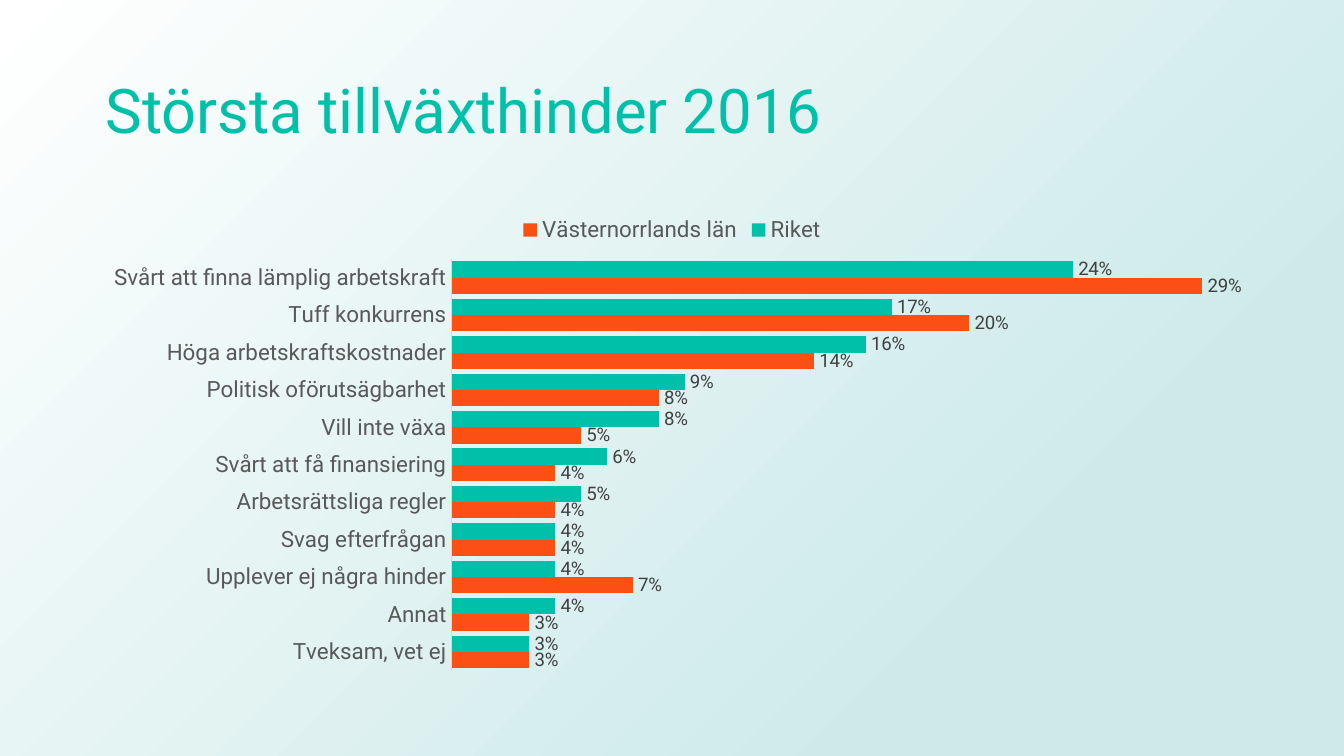
import pptx
import pptx.util
import pptx.chart.data
import pptx.dml.color
import pptx.enum.chart
import pptx.enum.dml
import pptx.enum.shapes
import pptx.enum.text
import pptx.oxml

Pt = pptx.util.Pt
WIDTH, HEIGHT = 720, 405
COLOURS = {
    "teal": "00C0A9",
    "orange": "FB4F14",
    "mist": "CDEAE9",
    "white": "FFFFFF",
    "axis": "D9D9D9",
    "text": "595959",
    "label": "404040",
}
HINDRANCES = [
    ("Svårt att finna lämplig arbetskraft", 0.24, 0.29),
    ("Tuff konkurrens", 0.17, 0.20),
    ("Höga arbetskraftskostnader", 0.16, 0.14),
    ("Politisk oförutsägbarhet", 0.09, 0.08),
    ("Vill inte växa", 0.08, 0.05),
    ("Svårt att få finansiering", 0.06, 0.04),
    ("Arbetsrättsliga regler", 0.05, 0.04),
    ("Svag efterfrågan", 0.04, 0.04),
    ("Upplever ej några hinder", 0.04, 0.07),
    ("Annat", 0.04, 0.03),
    ("Tveksam, vet ej", 0.03, 0.03),
]
REGIONS = [("Riket", "teal"), ("Västernorrlands län", "orange")]


class SlideBuilder:
    """Holds the style and the current slide, and draws each kind of element."""

    def __init__(self, page, font_name="Roboto"):
        self.page = page
        self.font_name = font_name

    def colour(self, name):
        return pptx.dml.color.RGBColor.from_string(COLOURS[name])

    def style(self, font, size, colour):
        font.name = self.font_name
        font.size = Pt(size)
        font.color.rgb = self.colour(colour)

    def backdrop(self, start, end, end_position):
        box = self.page.shapes.add_shape(
            pptx.enum.shapes.MSO_SHAPE.RECTANGLE, 0, 0, Pt(WIDTH), Pt(HEIGHT))
        box.shadow.inherit = False
        box.line.fill.background()
        box.fill.gradient()
        box.fill.gradient_angle = 315
        stops = zip(box.fill.gradient_stops, (start, end), (0, end_position))
        for stop, name, position in stops:
            stop.color.rgb = self.colour(name)
            stop.position = position

    def title(self, text, left, top, width, height):
        box = self.page.shapes.add_textbox(Pt(left), Pt(top), Pt(width), Pt(height))
        frame = box.text_frame
        frame.word_wrap = True
        frame.vertical_anchor = pptx.enum.text.MSO_ANCHOR.MIDDLE
        para = frame.paragraphs[0]
        para.text = text
        para.line_spacing = 0.9
        self.style(para.font, 33, "teal")

    def bar_chart(self, left, top, width, height):
        data = pptx.chart.data.CategoryChartData(number_format="0%")
        data.categories = [row[0] for row in HINDRANCES]
        for column, (name, _) in enumerate(REGIONS, 1):
            data.add_series(name, [row[column] for row in HINDRANCES])
        chart = self.page.shapes.add_chart(
            pptx.enum.chart.XL_CHART_TYPE.BAR_CLUSTERED,
            Pt(left), Pt(top), Pt(width), Pt(height), data).chart
        chart.has_title = False
        self.style(chart.font, 12, "text")
        chart.has_legend = True
        chart.legend.position = pptx.enum.chart.XL_LEGEND_POSITION.TOP
        chart.legend.include_in_layout = False
        self.style(chart.legend.font, 12, "text")
        self.axes(chart)
        self.series(chart.plots[0])
        self.plot_area(chart, x=0.31, y=0.12, w=0.67, h=0.86)

    def axes(self, chart):
        none = pptx.enum.chart.XL_TICK_MARK.NONE
        category = chart.category_axis
        category.reverse_order = True
        category.major_tick_mark = category.minor_tick_mark = none
        category.format.line.color.rgb = self.colour("axis")
        category.format.line.width = Pt(0.75)
        self.style(category.tick_labels.font, 12, "text")
        value = chart.value_axis
        value.minimum_scale, value.maximum_scale = 0, 0.3
        value.has_major_gridlines = False
        value.visible = False

    def series(self, plot):
        plot.gap_width = 30
        plot.overlap = 0
        plot.vary_by_categories = False
        for series, (_, colour) in zip(plot.series, REGIONS):
            series.format.fill.solid()
            series.format.fill.fore_color.rgb = self.colour(colour)
            labels = series.data_labels
            labels.show_value = True
            labels.number_format = "0%"
            labels.number_format_is_linked = False
            labels.position = pptx.enum.chart.XL_LABEL_POSITION.OUTSIDE_END
            self.style(labels.font, 10, "label")

    def plot_area(self, chart, **frame):
        area = chart.element.chart.plotArea
        for old in area.findall(pptx.oxml.ns.qn("c:layout")):
            area.remove(old)
        sizes = "".join(f'<c:{key} val="{share}"/>' for key, share in frame.items())
        area.insert(0, pptx.oxml.parse_xml(
            f'<c:layout {pptx.oxml.ns.nsdecls("c")}><c:manualLayout>'
            '<c:layoutTarget val="inner"/><c:xMode val="edge"/><c:yMode val="edge"/>'
            f'{sizes}</c:manualLayout></c:layout>'))


def main():
    deck = pptx.Presentation()
    deck.slide_width, deck.slide_height = Pt(WIDTH), Pt(HEIGHT)
    builder = SlideBuilder(deck.slides.add_slide(deck.slide_layouts[6]))
    builder.backdrop("white", "mist", 0.77)
    builder.title("Största tillväxthinder 2016", 49.5, 21.5, 621, 78.5)
    builder.bar_chart(49.5, 108, 621, 256.5)
    deck.save("out.pptx")


if __name__ == "__main__":
    main()
